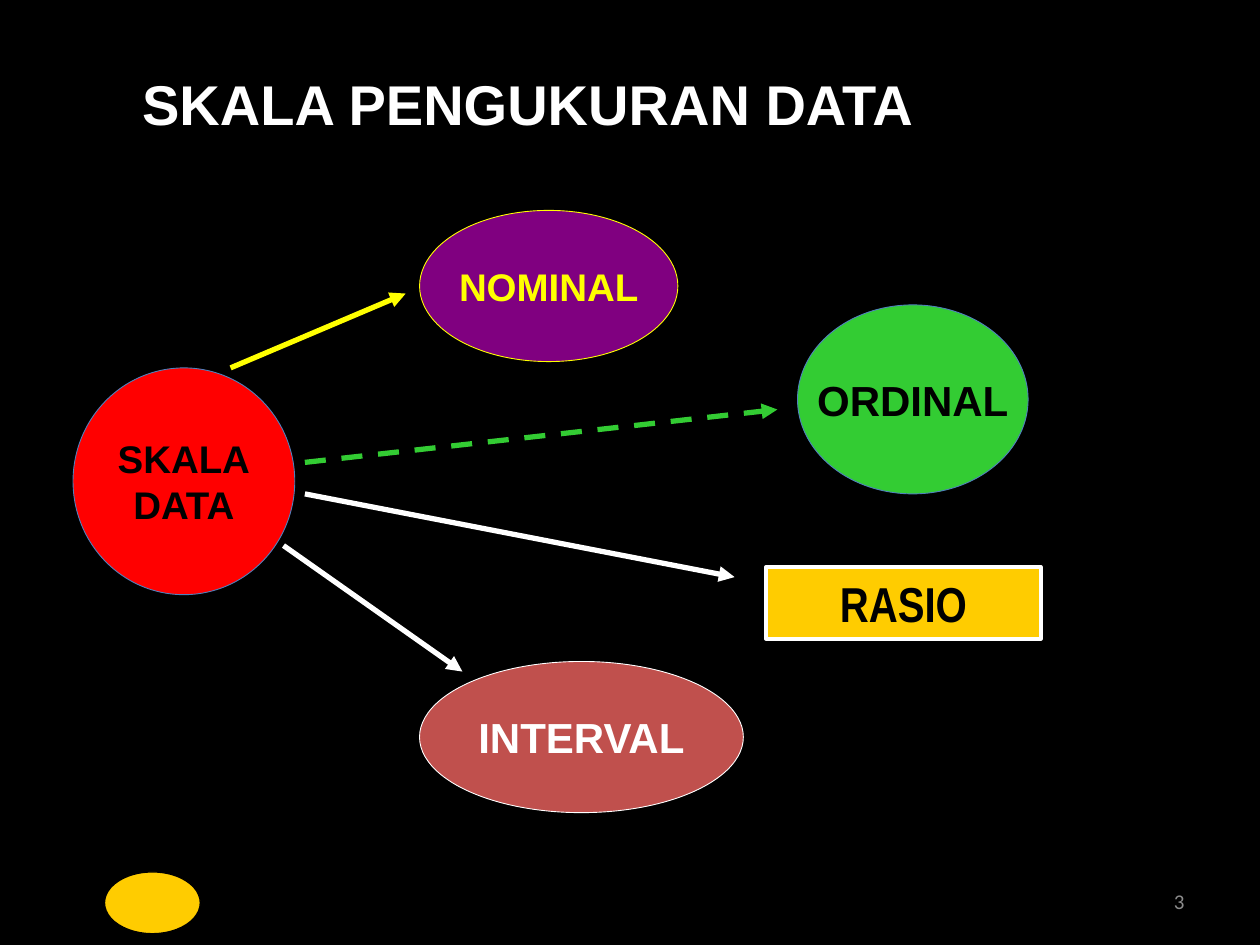
from pptx import Presentation
from pptx.dml.color import RGBColor
from pptx.enum.dml import MSO_LINE
from pptx.enum.shapes import MSO_CONNECTOR, MSO_SHAPE
from pptx.enum.text import MSO_ANCHOR, PP_ALIGN
from pptx.oxml.ns import qn
from pptx.util import Inches, Pt
from lxml import etree

BLACK = RGBColor(0x00, 0x00, 0x00)
WHITE = RGBColor(0xFF, 0xFF, 0xFF)
YELLOW = RGBColor(0xFF, 0xFF, 0x00)
GOLD = RGBColor(0xFF, 0xCC, 0x00)
PURPLE = RGBColor(0x80, 0x00, 0x80)
BRICK = RGBColor(0xC0, 0x50, 0x4D)
GREEN = RGBColor(0x33, 0xCC, 0x33)
RED = RGBColor(0xFF, 0x00, 0x00)
BLUE = RGBColor(0x4F, 0x81, 0xBD)
GREY = RGBColor(0x8C, 0x8C, 0x8C)


def place(shape, box):
    shape.left, shape.top, shape.width, shape.height = map(Inches, box)


def write(shape, text, *, size, color, font="Arial", bold=True,
          align=PP_ALIGN.CENTER, anchor=MSO_ANCHOR.MIDDLE, wrap=False):
    """Fill a shape with text, one paragraph for each line."""
    frame = shape.text_frame
    frame.text = text
    frame.word_wrap = wrap
    frame.vertical_anchor = anchor
    for paragraph in frame.paragraphs:
        paragraph.alignment = align
        paragraph.font.name = font
        paragraph.font.size = Pt(size)
        paragraph.font.bold = bold
        paragraph.font.color.rgb = color


def add_node(slide, kind, box, fill, outline, outline_width=0.5):
    node = slide.shapes.add_shape(kind, *map(Inches, box))
    node.shadow.inherit = False
    node.fill.solid()
    node.fill.fore_color.rgb = fill
    node.line.color.rgb = outline
    node.line.width = Pt(outline_width)
    return node


def add_arrow(slide, start, end, color, dash=None):
    arrow = slide.shapes.add_connector(
        MSO_CONNECTOR.STRAIGHT, *map(Inches, start + end))
    arrow.line.color.rgb = color
    arrow.line.width = Pt(3)
    if dash is not None:
        arrow.line.dash_style = dash
    properties = arrow.element.spPr
    etree.SubElement(properties.find(qn("a:ln")), qn("a:tailEnd"), type="triangle")
    etree.SubElement(properties, qn("a:effectLst"))


def main():
    presentation = Presentation()
    presentation.slide_width = Inches(10)
    presentation.slide_height = Inches(7.5)
    slide = presentation.slides.add_slide(presentation.slide_layouts[5])
    slide.background.fill.solid()
    slide.background.fill.fore_color.rgb = BLACK

    title = slide.shapes.title
    place(title, (1, 0.5, 6.38, 0.64))
    write(title, "SKALA PENGUKURAN DATA", size=32, color=WHITE,
          anchor=MSO_ANCHOR.TOP)

    # Plain emblem in the footer
    add_node(slide, MSO_SHAPE.OVAL, (0.83, 6.92, 0.76, 0.49), GOLD, BLACK, 0.75)

    page_number = slide.shapes.add_textbox(*map(Inches, (7.17, 6.95, 2.33, 0.4)))
    write(page_number, "3", size=12, color=GREY, font="Calibri", bold=False,
          align=PP_ALIGN.RIGHT, wrap=True)

    scales = [
        ("NOMINAL", (3.33, 1.67, 2.05, 1.2), PURPLE, YELLOW, 22, YELLOW),
        ("INTERVAL", (3.33, 5.25, 2.57, 1.2), BRICK, WHITE, 24, WHITE),
        ("ORDINAL", (6.33, 2.42, 1.83, 1.5), GREEN, BLUE, 24, BLACK),
        ("SKALA\nDATA", (0.58, 2.92, 1.76, 1.8), RED, BLUE, 22, BLACK),
    ]
    for label, box, fill, outline, size, color in scales:
        oval = add_node(slide, MSO_SHAPE.OVAL, box, fill, outline)
        write(oval, label, size=size, color=color)

    ratio = add_node(slide, MSO_SHAPE.RECTANGLE, (6.08, 4.5, 2.18, 0.57),
                     GOLD, WHITE, 2.25)
    write(ratio, "RASIO", size=28, color=BLACK, font="Arial Narrow", wrap=True)

    add_arrow(slide, (1.83, 2.92), (3.22, 2.33), YELLOW)
    add_arrow(slide, (2.42, 3.67), (6.17, 3.25), GREEN, MSO_LINE.DASH)
    add_arrow(slide, (2.42, 3.92), (5.83, 4.58), WHITE)
    add_arrow(slide, (2.25, 4.33), (3.67, 5.33), WHITE)

    presentation.save("out.pptx")


if __name__ == "__main__":
    main()
